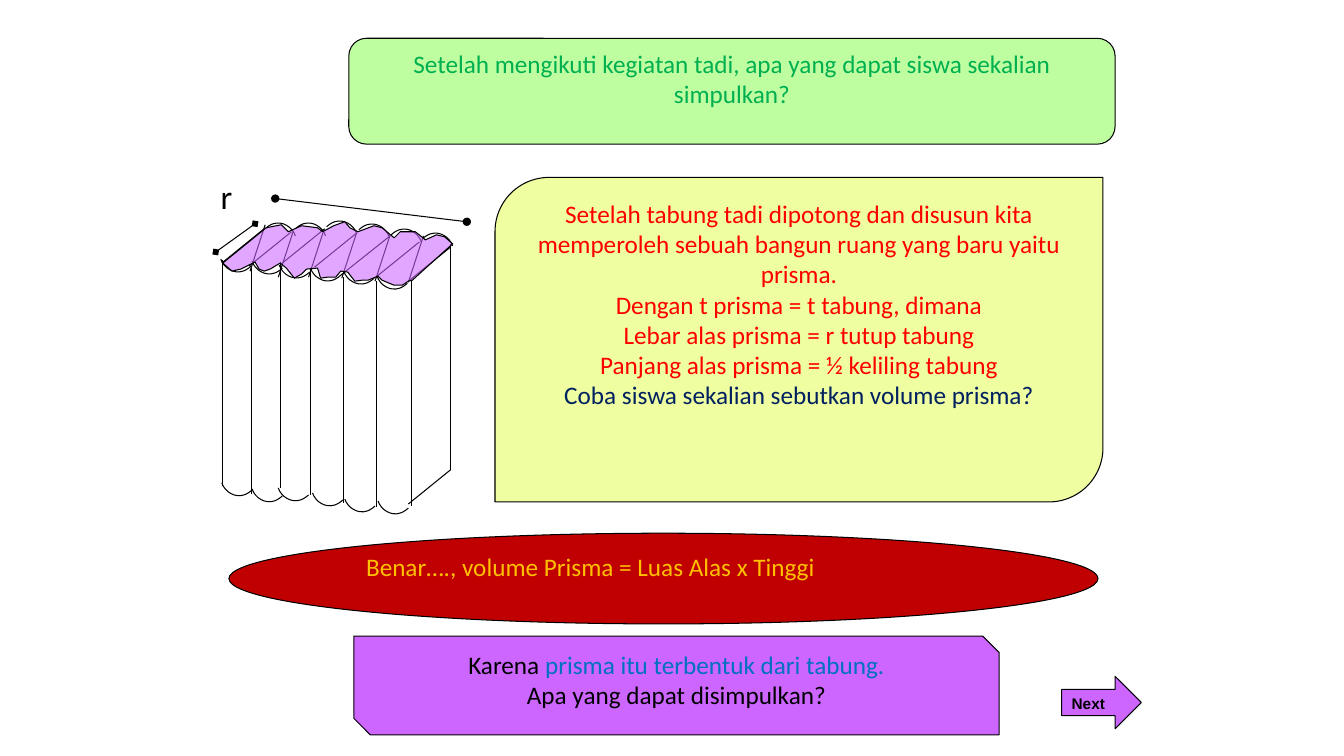
from lxml import etree
from pptx import Presentation
from pptx.dml.color import RGBColor
from pptx.enum.shapes import MSO_CONNECTOR, MSO_SHAPE
from pptx.enum.text import MSO_ANCHOR, PP_ALIGN
from pptx.oxml.ns import qn
from pptx.util import Inches, Pt

LEFT, CENTER = PP_ALIGN.LEFT, PP_ALIGN.CENTER
TOP = MSO_ANCHOR.TOP
STRAIGHT = MSO_CONNECTOR.STRAIGHT

THEME = {
    "font": "Calibri", "button_font": "Arial",
    "body": 18, "label": 24, "button": 11, "line": 0.75,
    "black": "000000", "green": "00B050", "red": "FF0000", "navy": "002060",
    "gold": "FFC000", "blue": "0070C0", "violet": "CC66FF",
    "mint": "BFFEA0", "lime": "EEFEA0", "crimson": "C00000",
}

# Each paragraph is a list of (text, colour) runs.
QUESTION = [[("Setelah mengikuti kegiatan tadi, apa yang dapat siswa sekalian simpulkan?", "green")]]
FINDINGS = [
    [("Setelah tabung tadi dipotong dan disusun kita memperoleh sebuah bangun "
      "ruang yang baru yaitu prisma.", "red")],
    [("Dengan t prisma = t tabung, dimana", "red")],
    [("Lebar alas prisma = r tutup tabung", "red")],
    [("Panjang alas prisma = ½ keliling tabung", "red")],
    [("Coba siswa sekalian sebutkan volume prisma?", "navy")],
]
ANSWER = [[("Benar…., volume Prisma = Luas Alas x Tinggi", "gold")]]
CONCLUSION = [
    [("Karena ", "black"), ("prisma itu terbentuk dari tabung.", "blue")],
    [("Apa yang dapat disimpulkan?", "black")],
]
NEXT = [[("Next", "black")]]
RADIUS = [[("r", "black")]]

# (preset, box, fill, paragraphs, text format)
PANELS = [
    (MSO_SHAPE.ROUNDED_RECTANGLE, (3.46, 0.38, 7.6, 1.05), "mint", QUESTION, {}),
    (MSO_SHAPE.ROUND_2_DIAG_RECTANGLE, (4.91, 1.76, 6.03, 3.22), "lime", FINDINGS, {}),
    (MSO_SHAPE.OVAL, (2.27, 5.29, 8.62, 0.9), "crimson", ANSWER, {"align": LEFT}),
    (MSO_SHAPE.RIGHT_ARROW, (10.53, 6.71, 0.79, 0.52), "violet", NEXT,
     {"align": LEFT, "font": "button_font", "size": "button", "bold": True}),
    (MSO_SHAPE.SNIP_2_DIAG_RECTANGLE, (3.51, 6.31, 6.4, 0.98), "violet", CONCLUSION, {}),
]

# Prism edges: the shared step (dx, dy) and the upper end of each line.
EDGES = [
    ((0, 2.24), [(4.47, 2.42), (4.08, 2.78), (3.73, 2.79), (3.41, 2.75),
                 (3.08, 2.67), (2.78, 2.6), (2.49, 2.66), (2.21, 2.58)]),
    ((-0.42, 0.34), [(4.47, 2.45), (4.16, 2.4), (3.54, 2.31), (3.22, 2.27),
                     (2.89, 2.3), (2.62, 2.27), (4.47, 4.66)]),
    ((-0.49, 0.39), [(3.87, 2.34)]),
    ((-0.15, 0.46), [(4.2, 2.34), (3.87, 2.33), (3.54, 2.3), (3.21, 2.29),
                     (2.91, 2.29), (2.63, 2.23)]),
]

# Scallops: direction (back edge -1, front edge 1) and starting points.
SCALLOPS = [
    (-1, [(2.93, 2.34), (3.23, 2.34), (3.54, 2.32), (3.86, 2.35), (4.18, 2.4), (4.49, 2.44)]),
    (1, [(3.74, 2.74), (3.41, 2.69), (3.08, 2.66), (2.77, 2.63), (2.5, 2.59), (2.19, 2.57)]),
    (1, [(3.75, 4.97), (3.42, 4.95), (3.1, 4.89), (2.76, 4.84), (2.5, 4.85), (2.2, 4.79)]),
]
SCALLOP_CURVES = [
    [(0, 0), (0.03, 0.09), (0.13, 0.15), (0.22, 0.12)],
    [(0.22, 0.12), (0.25, 0.11), (0.28, 0.09), (0.3, 0.07)],
]

LID = [
    (4.09, 2.78), (4.4, 2.5), (4.49, 2.42), (4.41, 2.35), (4.33, 2.33), (4.22, 2.38),
    (4.12, 2.3), (4.06, 2.3), (3.97, 2.3), (3.91, 2.36), (3.79, 2.26), (3.71, 2.24),
    (3.63, 2.27), (3.55, 2.3), (3.47, 2.26), (3.42, 2.2), (3.31, 2.24), (3.2, 2.3),
    (3.15, 2.26), (2.99, 2.24), (2.86, 2.3), (2.79, 2.23), (2.64, 2.26), (2.21, 2.61),
    (2.3, 2.69), (2.39, 2.67), (2.53, 2.6), (2.57, 2.67), (2.62, 2.69), (2.68, 2.67),
    (2.78, 2.61), (2.84, 2.66), (2.92, 2.76), (2.99, 2.72), (3.04, 2.67), (3.15, 2.66),
    (3.18, 2.76), (3.25, 2.75), (3.33, 2.75), (3.38, 2.69), (3.45, 2.7), (3.48, 2.74),
    (3.52, 2.79), (3.59, 2.78), (3.65, 2.78), (3.75, 2.74), (3.79, 2.78), (3.86, 2.81),
    (3.91, 2.83), (3.99, 2.83), (4.05, 2.79),
]
LID_OPACITY = 58
# (from, to, end marker)
MEASURES = [((2.73, 1.97), (4.63, 2.2), "oval"), ((2.53, 2.22), (2.14, 2.5), "diamond")]
RADIUS_BOX = (2.09, 1.7, 0.23, 0.5)


def color(name):
    return RGBColor.from_string(THEME[name])


def write(sp, paragraphs, align=CENTER, font="font", size="body", bold=False, wrap=True):
    tf = sp.text_frame
    tf.word_wrap = wrap
    tf.vertical_anchor = TOP
    for i, runs in enumerate(paragraphs):
        p = tf.add_paragraph() if i else tf.paragraphs[0]
        p.alignment = align
        for text, ink in runs:
            r = p.add_run()
            r.text = text
            r.font.name = THEME[font]
            r.font.size = Pt(THEME[size])
            r.font.bold = bold
            r.font.color.rgb = color(ink)


def outline(sp):
    sp.line.color.rgb = color("black")
    sp.line.width = Pt(THEME["line"])


def paint(sp, fill=None, opacity=None):
    sp.shadow.inherit = False
    outline(sp)
    if not fill:
        sp.fill.background()
        return
    sp.fill.solid()
    sp.fill.fore_color.rgb = color(fill)
    if opacity:
        clr = sp.fill._xPr.find(qn("a:solidFill"))[0]
        etree.SubElement(clr, qn("a:alpha")).set("val", str(opacity * 1000))


def add_line(shapes, start, end, marker=None):
    cx = shapes.add_connector(STRAIGHT, *map(Inches, start + end))
    outline(cx)
    if marker:
        ln = cx.line._get_or_add_ln()
        for tag in ("a:headEnd", "a:tailEnd"):
            etree.SubElement(ln, qn(tag)).set("type", marker)
    etree.SubElement(cx._element.spPr, qn("a:effectLst"))


def add_outline(shapes, points, close, **fill):
    pts = [(Inches(x), Inches(y)) for x, y in points]
    builder = shapes.build_freeform(*pts[0], scale=1.0)
    builder.add_line_segments(pts[1:], close=close)
    paint(builder.convert_to_shape(), **fill)


def bezier(curve, t):
    weights = ((1 - t) ** 3, 3 * t * (1 - t) ** 2, 3 * t * t * (1 - t), t ** 3)
    return tuple(sum(w * pt[axis] for w, pt in zip(weights, curve)) for axis in (0, 1))


def draw_prism(shapes):
    steps = 8
    scallop = [bezier(c, i / steps) for c in SCALLOP_CURVES for i in range(steps + 1)]
    for sign, starts in SCALLOPS:
        for x, y in starts:
            add_outline(shapes, [(x + sign * dx, y + sign * dy) for dx, dy in scallop], False)
    for (dx, dy), starts in EDGES:
        for x, y in starts:
            add_line(shapes, (x, y), (x + dx, y + dy))
    add_outline(shapes, LID, True, fill="violet", opacity=LID_OPACITY)
    for start, end, marker in MEASURES:
        add_line(shapes, start, end, marker)
    label = shapes.add_textbox(*map(Inches, RADIUS_BOX))
    write(label, RADIUS, align=LEFT, size="label", wrap=False)


def main():
    prs = Presentation()
    prs.slide_width, prs.slide_height = Inches(13.33), Inches(7.5)
    s = prs.slides.add_slide(prs.slide_layouts[6])
    for preset, box, fill, paragraphs, fmt in PANELS:
        sp = s.shapes.add_shape(preset, *map(Inches, box))
        paint(sp, fill)
        write(sp, paragraphs, **fmt)
    draw_prism(s.shapes.add_group_shape().shapes)
    prs.save("out.pptx")


if __name__ == "__main__":
    main()
